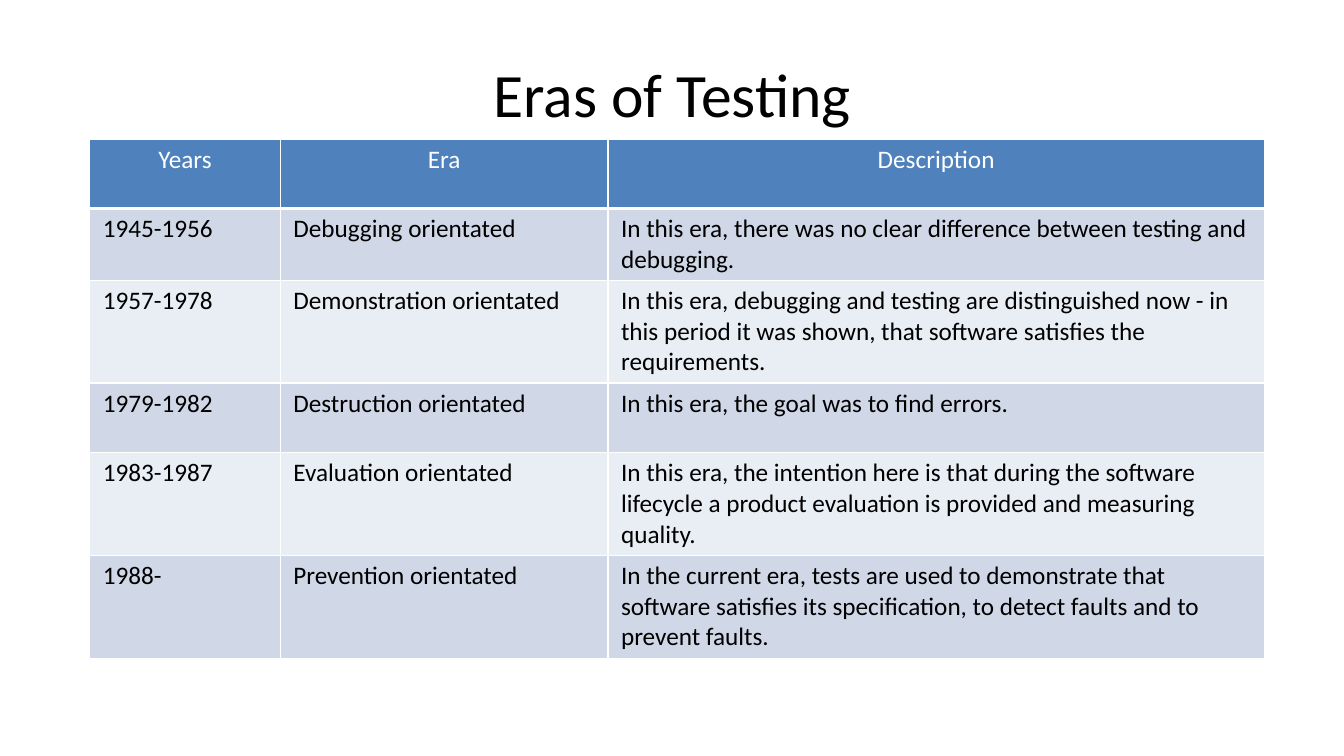
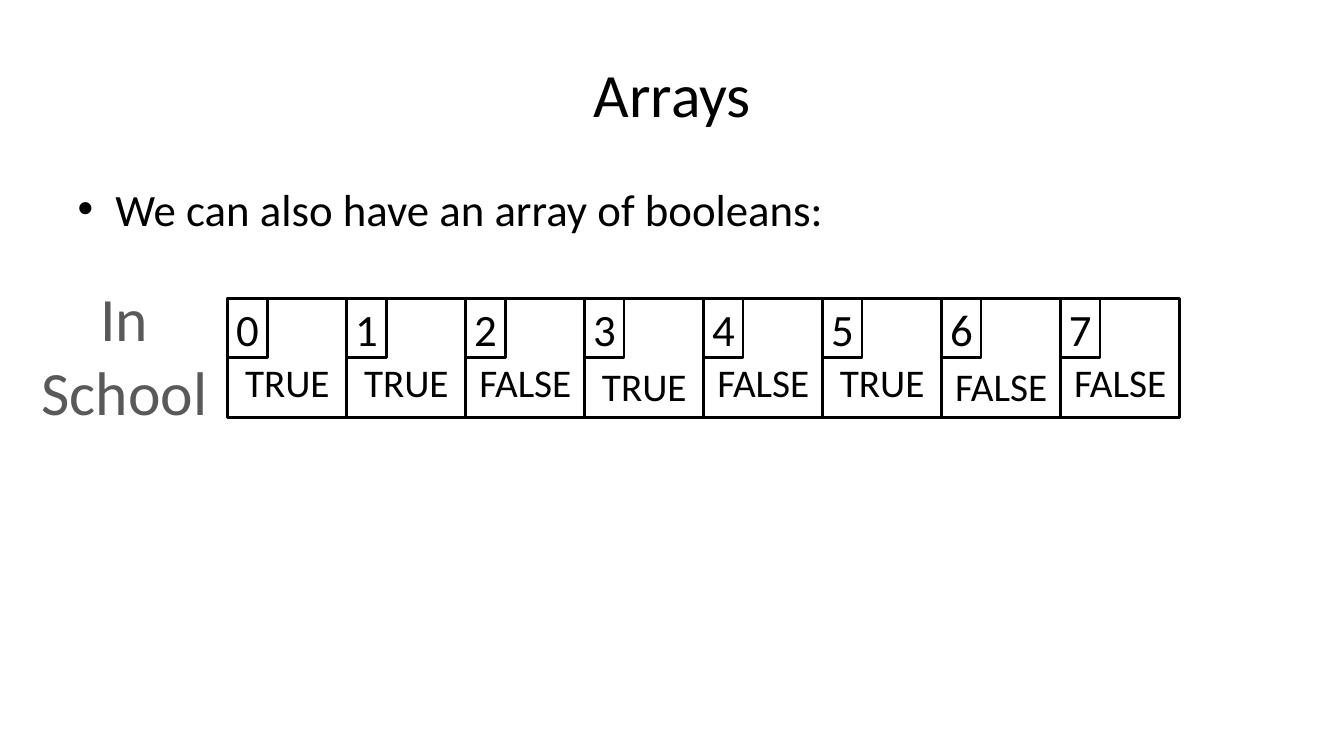
from dataclasses import dataclass

from lxml.etree import SubElement
from pptx import Presentation
from pptx.dml.color import RGBColor as RGB
from pptx.enum.shapes import MSO_SHAPE as SHAPE
from pptx.enum.text import MSO_ANCHOR as ANCHOR, PP_ALIGN as ALIGN
from pptx.oxml.ns import qn
from pptx.util import Emu, Pt

# Content
ERAS_TITLE = "Eras of Testing"
ERAS = [
    ("Years", "Era", "Description"),
    ("1945-1956", "Debugging orientated",
     "In this era, there was no clear difference between testing and debugging."),
    ("1957-1978", "Demonstration orientated",
     "In this era, debugging and testing are distinguished now - in this period "
     "it was shown, that software satisfies the requirements."),
    ("1979-1982", "Destruction orientated",
     "In this era, the goal was to find errors."),
    ("1983-1987", "Evaluation orientated",
     "In this era, the intention here is that during the software lifecycle "
     "a product evaluation is provided and measuring quality."),
    ("1988-", "Prevention orientated",
     "In the current era, tests are used to demonstrate that software satisfies "
     "its specification, to detect faults and to prevent faults."),
]
ARRAYS_TITLE = "Arrays"
ARRAYS_POINT = "We can also have an array of booleans:"
ARRAY_NAME = ["In", "School"]
ARRAY_VALUES = ["TRUE", "TRUE", "FALSE", "TRUE", "FALSE", "TRUE", "FALSE", "FALSE"]
LOW_VALUES = {3, 6}  # elements whose value sits slightly lower


@dataclass(frozen=True)
class Theme:
    font: str = "Calibri"
    ink: str = "000000"
    paper: str = "FFFFFF"
    label: str = "595959"
    header: str = "4F81BD"
    bands: tuple = ("D0D8E8", "E9EDF4")
    title_size: int = 44
    body_size: int = 32
    value_size: int = 28
    table_size: int = 18


T = Theme()

# Layout, in px at 100 px to the inch
PX = 9144
SLIDE = (1333, 750)
TITLE_BOX = (67, 30, 1200, 125)
BODY_BOX = (67, 175, 1200, 495)
TABLE_AT = (89, 138)
COLS = (189, 325, 651)
ROWS = (69, 70, 102, 69, 102, 102)
ARRAY_AT = (226, 296)
CELL = 118
INDEX_BOX = (39, 59)
LABEL_BOX = (30, 273, 187, 158)


def px(*values):
    return [Emu(v * PX) for v in values]


def apply(obj, **attrs):
    for name, value in attrs.items():
        setattr(obj, name, value)


def place(sp, box):
    apply(sp, **dict(zip(("left", "top", "width", "height"), px(*box))))


def write(tf, lines, size, color=T.ink, align=None):
    for i, text in enumerate(lines):
        p = tf.paragraphs[0] if i == 0 else tf.add_paragraph()
        if align is not None:
            p.alignment = align
        r = p.add_run()
        r.text = text
        apply(r.font, name=T.font, size=Pt(size), bold=False)
        r.font.color.rgb = RGB.from_string(color)


def add_titled_slide(prs, layout, title):
    s = prs.slides.add_slide(prs.slide_layouts.get_by_name(layout))
    place(s.shapes.title, TITLE_BOX)
    tf = s.shapes.title.text_frame
    tf.vertical_anchor = ANCHOR.MIDDLE
    write(tf, [title], T.title_size, align=ALIGN.CENTER)
    return s


def add_borders(cell, bottom):
    tc_pr = cell._tc.get_or_add_tcPr()
    for side, width in (("L", 1), ("R", 1), ("T", 1), ("B", bottom)):
        ln = SubElement(tc_pr, qn(f"a:ln{side}"), w=str(Pt(width)))
        fill = SubElement(ln, qn("a:solidFill"))
        SubElement(fill, qn("a:srgbClr"), val=T.paper)


def add_eras_table(s):
    table = s.shapes.add_table(len(ROWS), len(COLS),
                               *px(*TABLE_AT, sum(COLS), sum(ROWS))).table
    for column, width in zip(table.columns, px(*COLS)):
        column.width = width
    for row, height in zip(table.rows, px(*ROWS)):
        row.height = height
    margins = dict(zip(("margin_left", "margin_top", "margin_right", "margin_bottom"),
                       px(13, 5, 13, 5)))
    for i, texts in enumerate(ERAS):
        head = i == 0
        fill = T.header if head else T.bands[(i - 1) % 2]
        for j, text in enumerate(texts):
            cell = table.cell(i, j)
            apply(cell, **margins)
            add_borders(cell, bottom=3 if head else 1)
            cell.fill.solid()
            cell.fill.fore_color.rgb = RGB.from_string(fill)
            write(cell.text_frame, [text], T.table_size,
                  T.paper if head else T.ink, ALIGN.CENTER if head else ALIGN.LEFT)


def add_box(s, box, text, size, anchor, bottom=0):
    sp = s.shapes.add_shape(SHAPE.RECTANGLE, *px(*box))
    sp.shadow.inherit = False
    sp.fill.background()
    sp.line.color.rgb = RGB.from_string(T.ink)
    sp.line.width = Pt(2)
    tf = sp.text_frame
    apply(tf, margin_left=0, margin_right=0, margin_top=0,
          margin_bottom=px(bottom)[0], vertical_anchor=anchor, word_wrap=True)
    write(tf, [text], size, align=ALIGN.CENTER)


def add_array(s):
    left, top = ARRAY_AT
    for i, value in enumerate(ARRAY_VALUES):
        x = left + i * CELL
        add_box(s, (x, top, CELL, CELL), value, T.value_size, ANCHOR.BOTTOM,
                bottom=8 if i in LOW_VALUES else 12)
        add_box(s, (x, top, *INDEX_BOX), str(i), T.body_size, ANCHOR.MIDDLE)
    # Name of the array
    tf = s.shapes.add_textbox(*px(*LABEL_BOX)).text_frame
    tf.word_wrap = False
    write(tf, ARRAY_NAME, T.title_size, T.label, ALIGN.CENTER)


def main():
    prs = Presentation()
    prs.slide_width, prs.slide_height = px(*SLIDE)

    # Eras of testing
    add_eras_table(add_titled_slide(prs, "Title Only", ERAS_TITLE))

    # Arrays
    s = add_titled_slide(prs, "Title and Content", ARRAYS_TITLE)
    body = s.placeholders[1]
    place(body, BODY_BOX)
    write(body.text_frame, [ARRAYS_POINT], T.body_size)
    add_array(s)

    prs.save("out.pptx")


if __name__ == "__main__":
    main()
